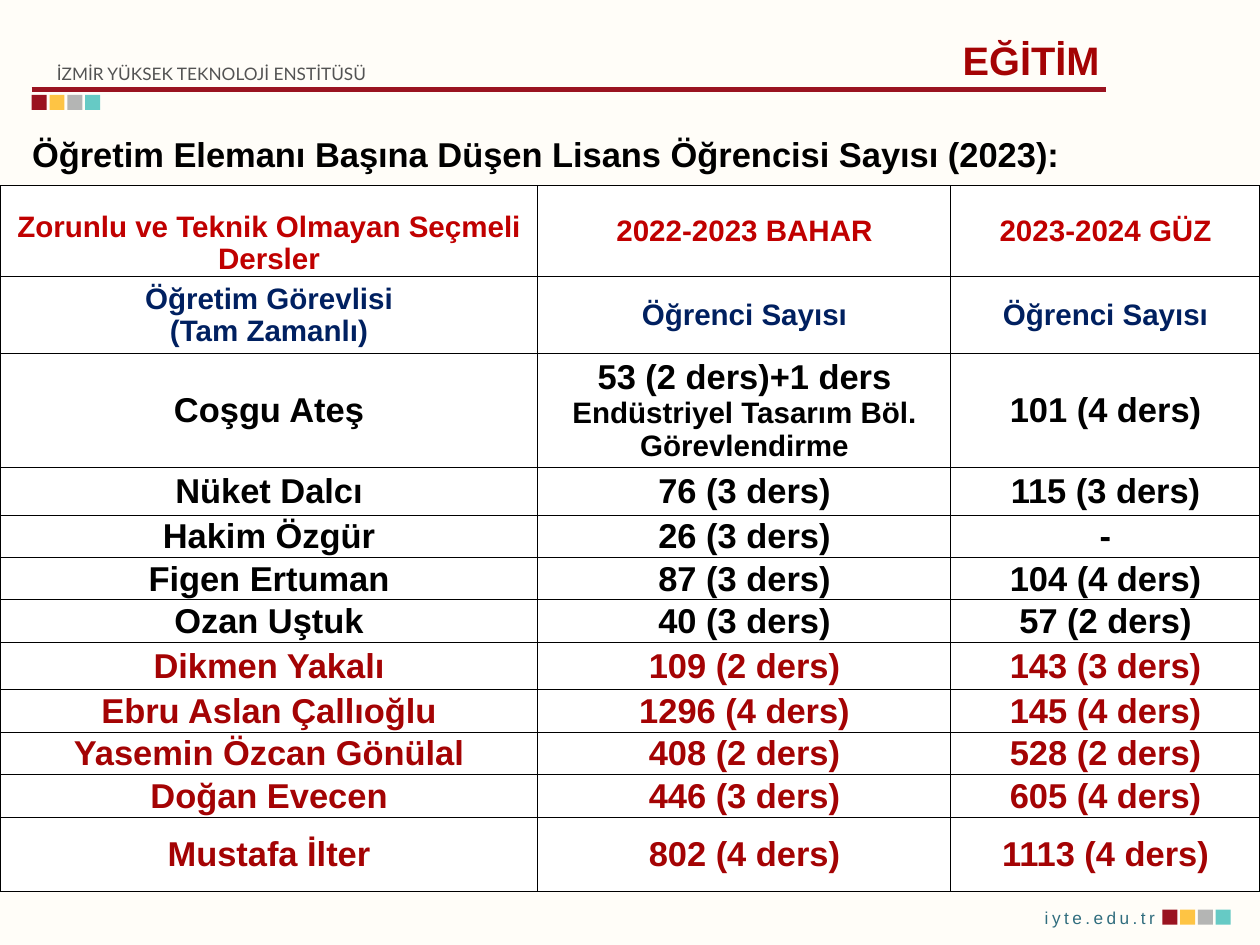
from dataclasses import dataclass

from lxml import etree
from pptx import Presentation
from pptx.dml.color import RGBColor
from pptx.enum.shapes import MSO_CONNECTOR, MSO_SHAPE
from pptx.enum.text import MSO_ANCHOR, PP_ALIGN
from pptx.oxml.ns import qn
from pptx.slide import Slide
from pptx.util import Cm, Pt

LEFT, CENTER, RIGHT = PP_ALIGN.LEFT, PP_ALIGN.CENTER, PP_ALIGN.RIGHT
TOP, MIDDLE, BOTTOM = MSO_ANCHOR.TOP, MSO_ANCHOR.MIDDLE, MSO_ANCHOR.BOTTOM
RECTANGLE, STRAIGHT = MSO_SHAPE.RECTANGLE, MSO_CONNECTOR.STRAIGHT

CRIMSON, GOLD, SILVER, TURQUOISE = "9A1320", "FEC444", "B4B5B4", "66CAC5"
BLACK, WHITE, CREAM = "000000", "FFFFFF", "FFFDF8"
RED, NAVY, DARK_RED = "C00000", "002060", "A40304"
GREY, TEAL = "535353", "306D7E"

COLUMN_WIDTHS = (15.42, 11.84, 8.86)


@dataclass(frozen=True)
class Label:
    text: str
    left: float
    top: float
    width: float
    height: float
    size: float
    color: str
    font: str = "Arial"
    bold: bool = False
    align: PP_ALIGN = LEFT
    anchor: MSO_ANCHOR = TOP
    line_spacing: float = 1.0
    letter_spacing: float = 0
    wrap: bool = True


@dataclass(frozen=True)
class CourseRow:
    cells: tuple[str, str, str]
    height: float = 1.21
    color: str = BLACK
    size: float = 28
    first_anchor: MSO_ANCHOR = MIDDLE
    small_print: str = ""


LABELS = (
    Label("İZMİR YÜKSEK TEKNOLOJİ ENSTİTÜSÜ", 1.5, 1.68, 10, 0.81, 14, GREY, "Lato"),
    Label("iyte.edu.tr", 29.82, 25.88, 3.6, 0.81, 14, TEAL,
          letter_spacing=2.8, wrap=False),
    Label("Öğretim Elemanı Başına Düşen Lisans Öğrencisi Sayısı (2023):",
          0.79, 3.7, 34.54, 1.42, 28, BLACK, bold=True, anchor=MIDDLE),
    Label("EĞİTİM", 27.05, 1.2, 4.6, 1.35, 32.3, DARK_RED, bold=True,
          align=RIGHT, anchor=MIDDLE, line_spacing=0.7),
)

COURSE_ROWS = (
    CourseRow(("Zorunlu ve Teknik Olmayan Seçmeli Dersler", "2022-2023 BAHAR",
               "2023-2024 GÜZ"), 2.59, RED, 24, BOTTOM),
    CourseRow(("Öğretim Görevlisi\n(Tam Zamanlı)", "Öğrenci Sayısı", "Öğrenci Sayısı"),
              2.21, NAVY, 24),
    CourseRow(("Coşgu Ateş", "53 (2 ders)+1 ders ", "101 (4 ders)"), 3.28,
              small_print="Endüstriyel Tasarım Böl. Görevlendirme"),
    CourseRow(("Nüket Dalcı", "76 (3 ders)", "115 (3 ders)"), 1.36),
    CourseRow(("Hakim Özgür", "26 (3 ders)", "-")),
    CourseRow(("Figen Ertuman", "87 (3 ders)", "104 (4 ders)")),
    CourseRow(("Ozan Uştuk", "40 (3 ders)", "57 (2 ders)")),
    CourseRow(("Dikmen Yakalı", "109 (2 ders)", "143 (3 ders)"), 1.36, DARK_RED),
    CourseRow(("Ebru Aslan Çallıoğlu", "1296 (4 ders)", "145 (4 ders)"), color=DARK_RED),
    CourseRow(("Yasemin Özcan Gönülal", "408 (2 ders)", "528 (2 ders)"), color=DARK_RED),
    CourseRow(("Doğan Evecen", "446 (3 ders)", "605 (4 ders)"), color=DARK_RED),
    CourseRow(("Mustafa İlter", "802 (4 ders)", "1113 (4 ders)"), 2.13, DARK_RED),
)


def rgb(color: str) -> RGBColor:
    return RGBColor.from_string(color)


def style_font(font, name: str, size: float, color: str, bold: bool) -> None:
    font.name, font.size, font.bold = name, Pt(size), bold
    font.color.rgb = rgb(color)


def add_label(slide: Slide, label: Label) -> None:
    box = slide.shapes.add_textbox(
        Cm(label.left), Cm(label.top), Cm(label.width), Cm(label.height))
    frame = box.text_frame
    frame.word_wrap = label.wrap
    frame.vertical_anchor = label.anchor
    frame.margin_left = frame.margin_right = Cm(0.13)
    frame.margin_top = frame.margin_bottom = Cm(0.13)
    paragraph = frame.paragraphs[0]
    paragraph.alignment = label.align
    paragraph.line_spacing = label.line_spacing
    run = paragraph.add_run()
    run.text = label.text
    if label.letter_spacing:
        run._r.get_or_add_rPr().set("spc", str(round(label.letter_spacing * 100)))
    style_font(paragraph.font, label.font, label.size, label.color, label.bold)


def add_color_squares(slide: Slide, left: float, top: float) -> None:
    for index, color in enumerate((CRIMSON, GOLD, SILVER, TURQUOISE)):
        square = slide.shapes.add_shape(
            RECTANGLE, Cm(left + 0.51 * index), Cm(top), Cm(0.43), Cm(0.43))
        square.shadow.inherit = False
        square.fill.solid()
        square.fill.fore_color.rgb = rgb(color)
        square.line.fill.background()


def add_header_rule(slide: Slide) -> None:
    rule = slide.shapes.add_connector(STRAIGHT, Cm(0.91), Cm(2.57), Cm(31.7), Cm(2.57))
    rule.line.color.rgb = rgb(CRIMSON)
    rule.line.width = Pt(4)
    etree.SubElement(rule._element.spPr, qn("a:effectLst"))


def add_borders(cell) -> None:
    properties = cell._tc.get_or_add_tcPr()
    for side in ("a:lnL", "a:lnR", "a:lnT", "a:lnB"):
        border = etree.SubElement(properties, qn(side), w=str(Pt(1)))
        fill = etree.SubElement(border, qn("a:solidFill"))
        etree.SubElement(fill, qn("a:srgbClr"), val=BLACK)


def fill_cell(cell, text: str, row: CourseRow, anchor: MSO_ANCHOR, small_print: str) -> None:
    add_borders(cell)
    cell.fill.solid()
    cell.fill.fore_color.rgb = rgb(WHITE)
    cell.vertical_anchor = anchor
    cell.margin_left = cell.margin_right = cell.margin_top = Cm(0.03)
    cell.margin_bottom = 0
    cell.text_frame.text = text
    for paragraph in cell.text_frame.paragraphs:
        paragraph.alignment = CENTER
        style_font(paragraph.font, "Arial", row.size, row.color, True)
    if small_print:
        paragraph = cell.text_frame.paragraphs[0]
        note = paragraph.add_run()
        note.text = small_print
        note.font.size = Pt(24)


def add_course_table(slide: Slide) -> None:
    table = slide.shapes.add_table(
        len(COURSE_ROWS), len(COLUMN_WIDTHS), 0, Cm(5.33), Cm(sum(COLUMN_WIDTHS)),
        Cm(sum(row.height for row in COURSE_ROWS))).table
    table.first_row = table.horz_banding = False
    for column, width in zip(table.columns, COLUMN_WIDTHS):
        column.width = Cm(width)
    for row_index, row in enumerate(COURSE_ROWS):
        table.rows[row_index].height = Cm(row.height)
        for column_index, text in enumerate(row.cells):
            fill_cell(table.cell(row_index, column_index), text, row,
                      row.first_anchor if column_index == 0 else MIDDLE,
                      row.small_print if column_index == 1 else "")


def main() -> None:
    presentation = Presentation()
    presentation.slide_width, presentation.slide_height = Cm(36.12), Cm(27.1)
    slide = presentation.slides.add_slide(presentation.slide_layouts[6])
    slide.background.fill.solid()
    slide.background.fill.fore_color.rgb = rgb(CREAM)
    add_header_rule(slide)
    add_color_squares(slide, 33.32, 26.09)
    add_color_squares(slide, 0.91, 2.72)
    for label in LABELS:
        add_label(slide, label)
    add_course_table(slide)
    presentation.save("out.pptx")


if __name__ == "__main__":
    main()
